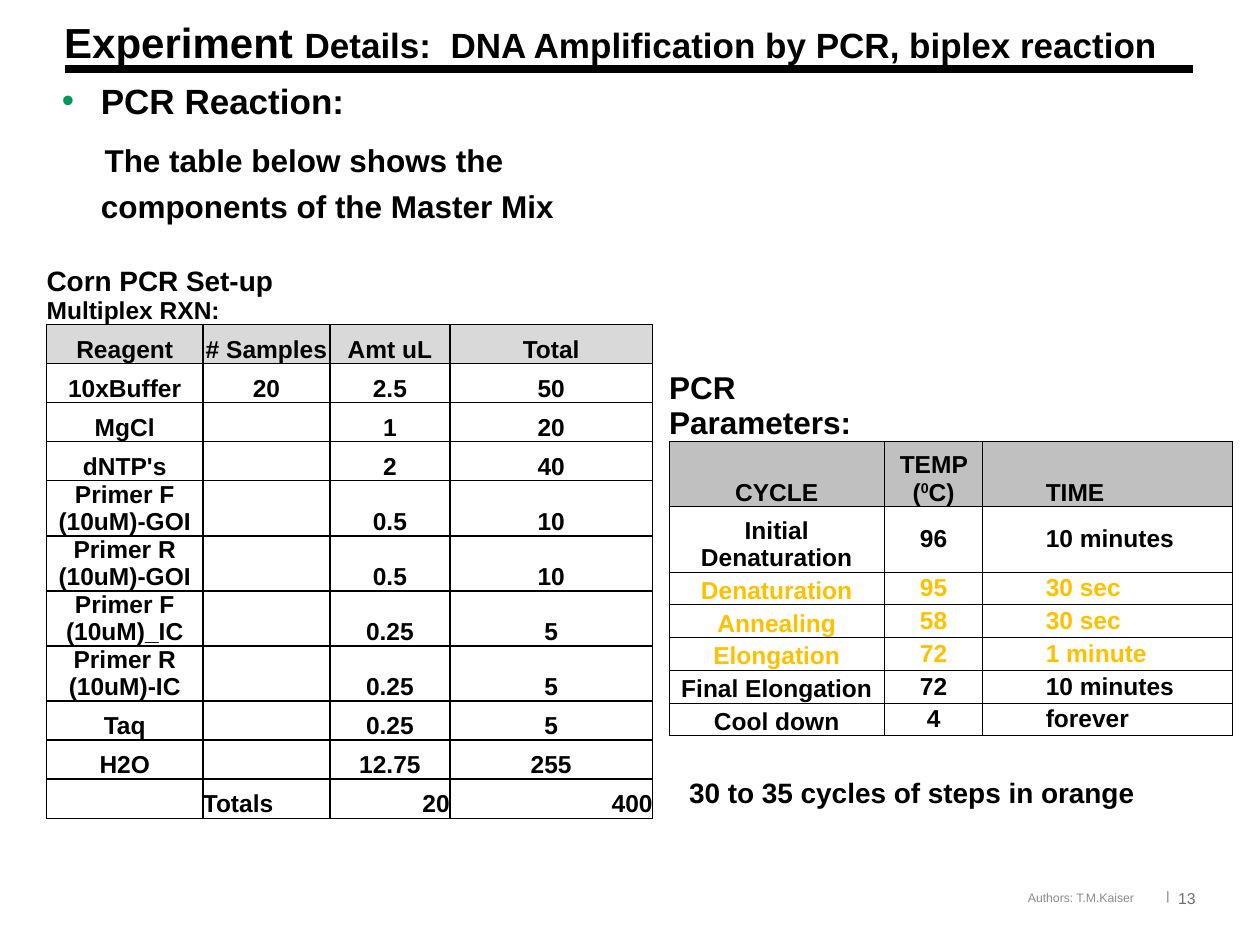
from dataclasses import dataclass
from typing import Callable, Optional

from lxml.etree import SubElement
from pptx import Presentation
from pptx.dml.color import RGBColor
from pptx.enum.shapes import MSO_CONNECTOR
from pptx.enum.text import MSO_ANCHOR as Anchor, MSO_AUTO_SIZE as AutoSize, PP_ALIGN as Align
from pptx.oxml.ns import qn
from pptx.util import Inches, Pt

BLACK = RGBColor(0x00, 0x00, 0x00)
GREEN = RGBColor(0x00, 0x98, 0x5F)
ORANGE = RGBColor(0xFF, 0xC0, 0x00)
SLATE = RGBColor(0x6C, 0x6F, 0x70)
FOOTER_GRAY = RGBColor(0x8C, 0x8C, 0x8C)
LIGHT_GRAY = RGBColor(0xD9, 0xD9, 0xD9)
MID_GRAY = RGBColor(0xC0, 0xC0, 0xC0)


@dataclass
class Entry:
    text: str = ""
    align: Align = Align.CENTER
    anchor: Anchor = Anchor.BOTTOM
    color: RGBColor = BLACK
    indent: float = 0
    fill: Optional[RGBColor] = None


@dataclass
class Grid:
    left: float
    top: float
    columns: list[float]
    heights: list[float]
    border: float
    caption_rows: int
    entries: list[list[Entry]]


@dataclass
class Label:
    text: str
    box: tuple[float, float, float, float]
    size: float
    color: RGBColor
    align: Align = Align.CENTER
    anchor: Anchor = Anchor.TOP
    insets: tuple[float, float] = (0, 0)
    bold: bool = False
    wrap: bool = True


def write(paragraph, text: str, *, size: float = 14, bold: bool = True,
          color: RGBColor = BLACK, align: Align = Align.LEFT,
          line: Optional[float] = None, before: float = 0,
          margin: float = 0, indent: float = 0, raised: bool = False) -> None:
    paragraph.alignment = align
    paragraph.space_before = Pt(before)
    if line:
        paragraph.line_spacing = Pt(line)
    properties = paragraph._p.get_or_add_pPr()
    properties.set("marL", str(Inches(margin)))
    properties.set("indent", str(Inches(indent)))
    run = paragraph.add_run()
    run.text = text
    run.font.name = "Arial"
    run.font.size = Pt(size)
    run.font.bold = bold
    run.font.color.rgb = color
    if raised:
        run.font._element.set("baseline", "30000")


def set_bullet(paragraph, mark: Optional[str]) -> None:
    properties = paragraph._p.get_or_add_pPr()
    if mark is None:
        SubElement(properties, qn("a:buNone"))
        return
    tint = SubElement(properties, qn("a:buClr"))
    SubElement(tint, qn("a:srgbClr"), val=str(GREEN))
    SubElement(properties, qn("a:buFont"), typeface="Arial")
    SubElement(properties, qn("a:buChar"), char=mark)


def place(shape, left: float, top: float, width: float, height: float) -> None:
    shape.left, shape.top = Inches(left), Inches(top)
    shape.width, shape.height = Inches(width), Inches(height)


def set_frame(frame, anchor: Anchor, insets: tuple[float, float] = (0, 0)) -> None:
    frame.margin_left = frame.margin_right = Inches(insets[0])
    frame.margin_top = frame.margin_bottom = Inches(insets[1])
    frame.vertical_anchor = anchor
    frame.word_wrap = True
    frame.auto_size = AutoSize.NONE


def set_borders(cell, width: float, visible: str) -> None:
    properties = cell._tc.get_or_add_tcPr()
    for side in "LRTB":
        edge = SubElement(properties, qn(f"a:ln{side}"), w=str(Pt(width)))
        if side in visible:
            SubElement(SubElement(edge, qn("a:solidFill")), qn("a:srgbClr"), val=str(BLACK))
        else:
            SubElement(edge, qn("a:noFill"))


def draw_grid(slide, grid: Grid):
    total_rows, total_columns = len(grid.heights), len(grid.columns)
    table = slide.shapes.add_table(
        total_rows, total_columns, Inches(grid.left), Inches(grid.top),
        Inches(sum(grid.columns)), Inches(sum(grid.heights))).table
    table.first_row = table.horz_banding = False
    for column, width in zip(table.columns, grid.columns):
        column.width = Inches(width)
    for index, (row, height) in enumerate(zip(table.rows, grid.heights)):
        row.height = Inches(height)
        body_row = index - grid.caption_rows
        visible = "LRTB" if body_row >= 0 else "B" if body_row == -1 else ""
        for position, cell in enumerate(row.cells):
            cell.margin_left = cell.margin_right = cell.margin_top = cell.margin_bottom = 0
            set_borders(cell, grid.border, visible)
            entry = grid.entries[body_row][position] if body_row >= 0 else Entry()
            cell.vertical_anchor = entry.anchor
            if entry.fill:
                cell.fill.solid()
                cell.fill.fore_color.rgb = entry.fill
            else:
                cell.fill.background()
            if entry.text:
                write(cell.text_frame.paragraphs[0], entry.text, color=entry.color,
                      align=entry.align, margin=entry.indent)
    return table


def draw_label(slide, label: Label) -> None:
    box = slide.shapes.add_textbox(*map(Inches, label.box))
    set_frame(box.text_frame, label.anchor, label.insets)
    box.text_frame.word_wrap = label.wrap
    write(box.text_frame.paragraphs[0], label.text, size=label.size, bold=label.bold,
          color=label.color, align=label.align)


def reagent_entries() -> list[list[Entry]]:
    mix = [("10xBuffer", "20", "2.5", "50"), ("MgCl", "", "1", "20"),
           ("dNTP's", "", "2", "40"),
           ("Primer F (10uM)-GOI", "", "0.5", "10"),
           ("Primer R (10uM)-GOI", "", "0.5", "10"),
           ("Primer F (10uM)_IC", "", "0.25", "5"),
           ("Primer R (10uM)-IC", "", "0.25", "5"),
           ("Taq", "", "0.25", "5"), ("H2O", "", "12.75", "255")]
    header = [Entry(name, fill=LIGHT_GRAY)
              for name in ("Reagent", "# Samples", "Amt uL", "Total")]
    totals = [Entry(), Entry("Totals", Align.LEFT),
              Entry("20", Align.RIGHT), Entry("400", Align.RIGHT)]
    return [header, *([Entry(text) for text in row] for row in mix), totals]


def cycle_entries() -> list[list[Entry]]:
    steps = [("Initial Denaturation", "96", "10 minutes", BLACK),
             ("Denaturation", "95", "30 sec", ORANGE),
             ("Annealing", "58", "30 sec", ORANGE),
             ("Elongation", "72", "1 minute", ORANGE),
             ("Final Elongation", "72", "10 minutes", BLACK),
             ("Cool down", "4", "forever", BLACK)]
    header = [Entry("CYCLE", fill=MID_GRAY), Entry("TEMP (", fill=MID_GRAY),
              Entry("TIME", Align.LEFT, indent=0.5, fill=MID_GRAY)]
    return [header, *([Entry(step, color=color),
                       Entry(degrees, anchor=Anchor.MIDDLE, color=color),
                       Entry(time, Align.LEFT, Anchor.MIDDLE, color, 0.5)]
                      for step, degrees, time, color in steps)]


def draw_heading(slide) -> None:
    title = slide.shapes.title
    place(title, 0.51, 0.2, 8.98, 0.48)
    set_frame(title.text_frame, Anchor.TOP)
    heading = title.text_frame.paragraphs[0]
    write(heading, "Experiment ", size=24, line=24)
    write(heading, "Details:  DNA Amplification by PCR, biplex reaction", size=20, line=24)
    rule = slide.shapes.add_connector(
        MSO_CONNECTOR.STRAIGHT, Inches(0.52), Inches(0.55), Inches(9.47), Inches(0.55))
    rule.line.color.rgb = BLACK
    rule.line.width = Pt(4.5)
    SubElement(rule._element.spPr, qn("a:effectLst"))


def draw_introduction(slide) -> None:
    introduction = slide.placeholders[1]
    place(introduction, 0.49, 0.6, 4.1, 1.29)
    frame = introduction.text_frame
    set_frame(frame, Anchor.TOP)
    reaction, explanation = frame.paragraphs[0], frame.add_paragraph()
    set_bullet(reaction, "•")
    write(reaction, "PCR Reaction:", size=20, line=26, margin=0.31, indent=-0.31)
    set_bullet(explanation, None)
    write(explanation, "The table below shows the components of the Master Mix",
          size=18, line=26, before=7.2, margin=0.31, indent=0.03)


def draw_tables(slide) -> None:
    reagents = draw_grid(slide, Grid(
        0.37, 1.8, [1.24, 1.01, 0.95, 1.61], [0.31] * 13, 1, 2, reagent_entries()))
    setup = reagents.cell(0, 0)
    setup.merge(reagents.cell(1, 1))
    write(setup.text_frame.paragraphs[0], "Corn PCR Set-up", size=16)
    write(setup.text_frame.add_paragraph(), "Multiplex RXN:")

    cycles = draw_grid(slide, Grid(
        5.31, 2.94, [1.71, 0.78, 1.98], [0.32] + [0.52] * 2 + [0.26] * 5, 0.5, 1,
        cycle_entries()))
    write(cycles.cell(0, 0).text_frame.paragraphs[0], "PCR Parameters:", size=18)
    temperature = cycles.cell(1, 1).text_frame.paragraphs[0]
    write(temperature, "0", align=Align.CENTER, raised=True)
    write(temperature, "C)", align=Align.CENTER)


def main() -> None:
    deck = Presentation()
    deck.slide_width, deck.slide_height = Inches(10), Inches(7.5)
    slide = deck.slides.add_slide(deck.slide_layouts[1])
    draw_heading(slide)
    draw_introduction(slide)
    draw_tables(slide)
    labels: list[Label] = [
        Label("|", (9.21, 7.05, 0.12, 0.15), 7, SLATE),
        Label("13", (9.34, 7.05, 0.16, 0.15), 9, SLATE, anchor=Anchor.MIDDLE),
        Label("Authors: T.M.Kaiser", (4.24, 7.01, 4.88, 0.23), 7, FOOTER_GRAY,
              Align.RIGHT, Anchor.MIDDLE, (0.12, 0.05)),
        Label("30 to 35 cycles of steps in orange", (5.37, 6.11, 3.78, 0.37), 16, BLACK,
              Align.LEFT, insets=(0.1, 0.05), bold=True, wrap=False),
    ]
    for label in labels:
        draw_label(slide, label)
    deck.save("out.pptx")


if __name__ == "__main__":
    main()
